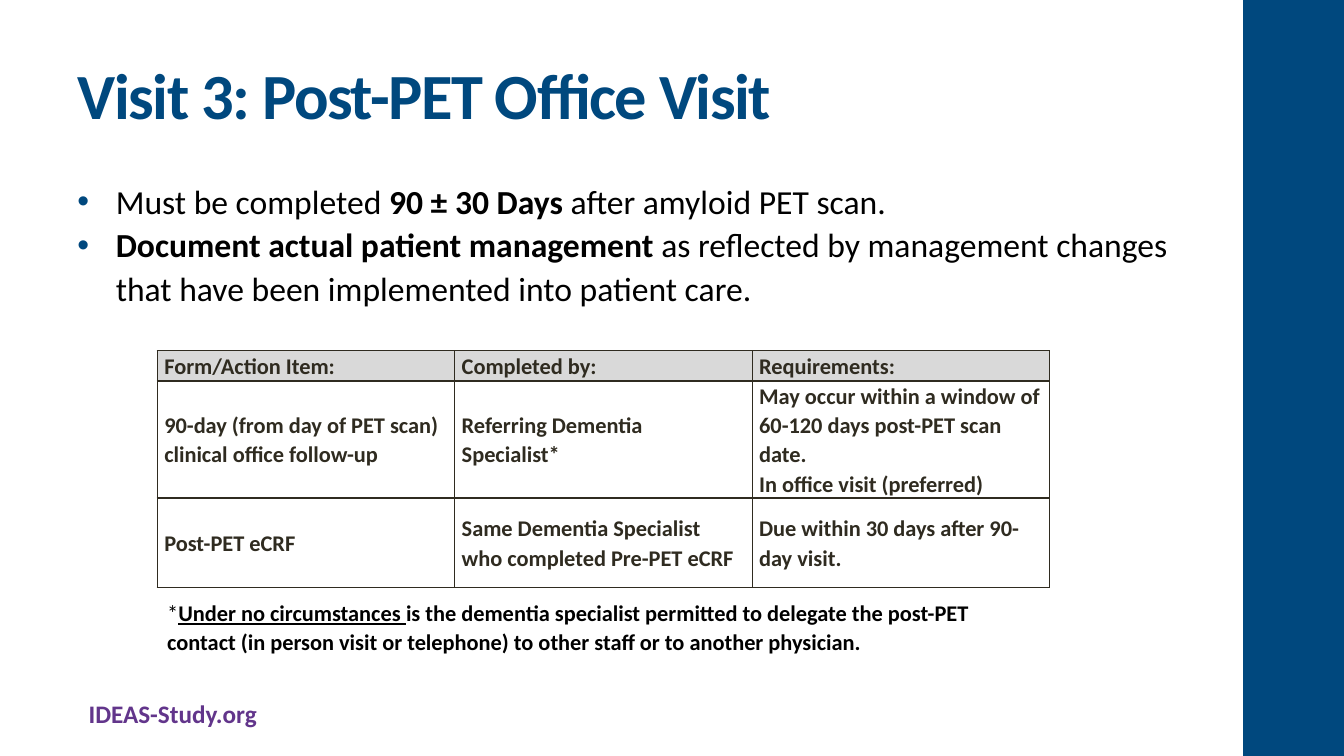
from lxml import etree
from pptx import Presentation
from pptx import util as u
from pptx.dml.color import RGBColor
from pptx.enum import shapes, text
from pptx.oxml import ns

BLUE, PURPLE, INK, GREY, BLACK = "00487E", "62358B", "2F2B20", "D9D9D9", "000000"
MIDDLE = text.MSO_ANCHOR.MIDDLE


def rgb(value):
    return RGBColor.from_string(value)


def sub(parent, tag, **attrs):
    return etree.SubElement(parent, ns.qn(tag), attrs)


def write(p, runs, size=16, color=BLACK, bold=False, spacing=None, line=None, bullet=None):
    """Fill a paragraph; runs is a string or a list of (text, bold, underline)."""
    if bullet:
        pPr = p._p.get_or_add_pPr()
        pPr.set("marL", str(u.Inches(0.38)))
        pPr.set("indent", str(u.Inches(-0.38)))
        sub(sub(pPr, "a:buClr"), "a:srgbClr", val=bullet)
        sub(pPr, "a:buFont", typeface="Arial")
        sub(pPr, "a:buChar", char="•")
    if line:
        p.line_spacing = line
    if isinstance(runs, str):
        runs = [(runs, bold, False)]
    for words, strong, underline in runs:
        r = p.add_run()
        r.text = words
        r.font.name = "Calibri"
        r.font.size = u.Pt(size)
        r.font.bold = strong
        r.font.underline = underline
        r.font.color.rgb = rgb(color)
        if spacing:
            r._r.get_or_add_rPr().set("spc", str(spacing))


class Deck:
    line = 1.07

    def __init__(self):
        self.prs = Presentation()
        self.prs.slide_width, self.prs.slide_height = u.Inches(13.33), u.Inches(7.5)
        self.slide = self.prs.slides.add_slide(self.prs.slide_layouts[6])

    def bar(self, box, color):
        sp = self.slide.shapes.add_shape(shapes.MSO_SHAPE.RECTANGLE, *map(u.Inches, box))
        sp.shadow.inherit = False
        sp.fill.solid()
        sp.fill.fore_color.rgb = rgb(color)
        sp.line.fill.background()

    def text(self, box, paragraphs, wrap=True, anchor=text.MSO_ANCHOR.TOP, **fmt):
        tf = self.slide.shapes.add_textbox(*map(u.Inches, box)).text_frame
        tf.word_wrap = wrap
        tf.vertical_anchor = anchor
        self.paragraphs(tf, paragraphs, **fmt)

    def paragraphs(self, tf, paragraphs, **fmt):
        for i, runs in enumerate(paragraphs):
            write(tf.add_paragraph() if i else tf.paragraphs[0], runs, **fmt)

    def table(self, left, top, col_width, heights, rows):
        cols = len(rows[0])
        table = self.slide.shapes.add_table(
            len(rows), cols, u.Inches(left), u.Inches(top),
            u.Inches(col_width * cols), u.Inches(sum(heights))).table
        for col in table.columns:
            col.width = u.Inches(col_width)
        for i, (height, row) in enumerate(zip(heights, rows)):
            table.rows[i].height = u.Inches(height)
            for j, paragraphs in enumerate(row):
                self.cell(table.cell(i, j), paragraphs, GREY if i == 0 else None)

    def cell(self, cell, paragraphs, fill):
        cell.vertical_anchor = MIDDLE
        cell.margin_left = cell.margin_right = u.Inches(0.07)
        cell.margin_top = cell.margin_bottom = 0
        # Borders come before the fill in the cell properties
        tcPr = cell._tc.get_or_add_tcPr()
        for side in ("a:lnL", "a:lnR", "a:lnT", "a:lnB"):
            ln = sub(tcPr, side, w=str(u.Pt(1)))
            sub(sub(ln, "a:solidFill"), "a:srgbClr", val=INK)
        if fill:
            cell.fill.solid()
            cell.fill.fore_color.rgb = rgb(fill)
        else:
            cell.fill.background()
        self.paragraphs(cell.text_frame, paragraphs, color=INK, bold=True, line=self.line)


def main():
    deck = Deck()

    # Side bar and site address
    deck.bar((12.33, 0, 1, 7.5), BLUE)
    deck.text((0.78, 6.88, 1.88, 0.4), ["IDEAS-Study.org"], wrap=False,
              size=18, color=PURPLE, bold=True)

    # Title and key points
    deck.text((0.67, 0.3, 11.11, 1.25), ["Visit 3: Post-PET Office Visit"],
              anchor=MIDDLE, size=46, color=BLUE, bold=True, spacing=-100)
    deck.text((0.67, 1.72, 11.11, 1.5), [
        [("Must be completed ", False, False), ("90 ± 30 Days", True, False),
         (" after amyloid PET scan.", False, False)],
        [("Document actual patient management ", True, False),
         ("as reflected by management changes that have been implemented "
          "into patient care.", False, False)],
    ], size=24, line=deck.line, bullet=BLUE)

    # Visit requirements
    deck.table(1.56, 3.48, 2.95, [0.3, 1.16, 0.89], [
        [["Form/Action Item:"], ["Completed by:"], ["Requirements:"]],
        [["90-day (from day of PET scan) clinical office follow-up"],
         ["Referring Dementia Specialist*"],
         ["May occur within a window of 60-120 days post-PET scan date.",
          "In office visit (preferred)"]],
        [["Post-PET eCRF"],
         ["Same Dementia Specialist who completed Pre-PET eCRF"],
         ["Due within 30 days after 90-day visit."]],
    ])

    # Footnote
    deck.text((1.56, 5.88, 8.29, 0.66), [
        [("*", False, False), ("Under no circumstances ", True, True),
         ("is the dementia specialist permitted to delegate the post-PET contact "
          "(in person visit or telephone) to other staff or to another physician.",
          True, False)],
    ], line=deck.line)

    deck.prs.save("out.pptx")


if __name__ == "__main__":
    main()
